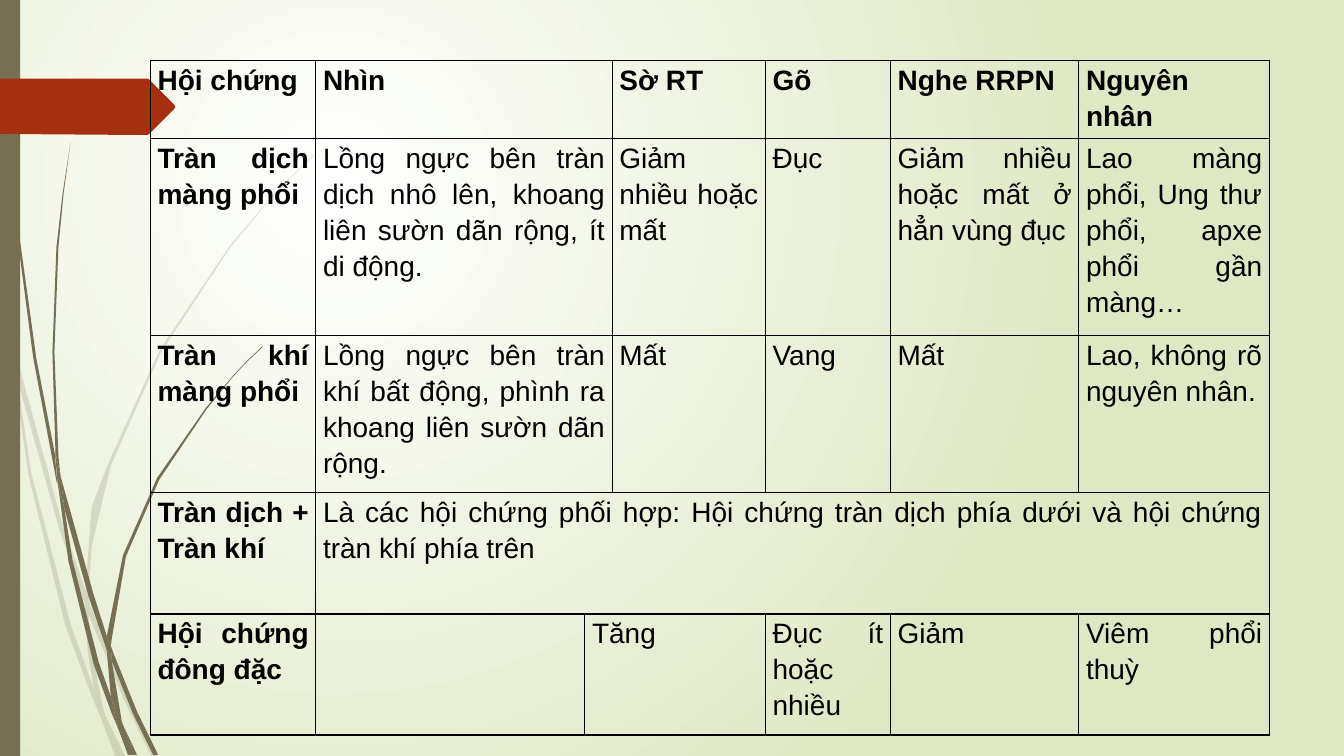
from lxml.etree import SubElement
from pptx import Presentation
from pptx.dml.color import RGBColor as Rgb
from pptx.enum.shapes import MSO_SHAPE as Shape
from pptx.enum.text import PP_ALIGN as Align
from pptx.oxml.ns import qn
from pptx.util import Cm, Pt

COLORS = {"ink": "000000", "stem": "766F54", "tab": "A53010",
          "glow": "FFFFFF", "field": "DFE8C4"}
FONT = "Arial"
UNIT = Cm(2.54) / 100  # outlines are in hundredths of an inch

# Outlines of the grass, as corner points
PALE_GRASS = [
    [(11, 350), (9, 322), (0, 282), (0, 299), (10, 344)],
    [(58, 522), (84, 599), (85, 586), (62, 520), (14, 345), (17, 376)],
    [(92, 607), (88, 596), (88, 610), (123, 694), (150, 750), (155, 750),
     (127, 692)],
    [(119, 750), (124, 750), (105, 711)],
    [(93, 683), (70, 619), (31, 469), (17, 376), (11, 350), (28, 470),
     (65, 621), (92, 693), (101, 714), (99, 707)],
    [(84, 599), (87, 646), (93, 683), (96, 692), (105, 711), (103, 706),
     (91, 646), (88, 610), (88, 608)],
    [(88, 584), (91, 542), (110, 462), (160, 349), (229, 245), (268, 198),
     (290, 175), (312, 154), (312, 153), (289, 175), (268, 197), (228, 244),
     (158, 348), (107, 461), (91, 503), (85, 584), (85, 586), (88, 596)],
    [(101, 714), (114, 750), (119, 750)],
    [(88, 608), (88, 610), (88, 596), (85, 586), (84, 599)],
    [(96, 692), (93, 683), (99, 707), (101, 714), (119, 750), (105, 711)],
]
DARK_GRASS = [
    [(7, 110), (17, 233), (33, 355), (56, 477), (57, 481), (55, 457),
     (55, 453), (36, 355), (19, 232), (8, 109), (5, 48), (4, 0), (3, 0),
     (4, 48)],
    [(88, 592), (106, 645), (106, 633), (106, 631), (93, 590), (60, 472),
     (64, 505)],
    [(113, 649), (110, 641), (111, 656), (132, 708), (152, 749), (157, 749),
     (136, 706)],
    [(110, 691), (98, 657), (72, 556), (64, 505), (57, 477), (68, 557),
     (93, 659), (111, 708), (117, 722), (116, 717)],
    [(60, 472), (58, 453), (54, 349), (58, 245), (63, 193), (70, 141),
     (62, 193), (56, 245), (52, 349), (55, 449)],
    [(133, 749), (136, 749), (122, 719)],
    [(57, 477), (64, 505), (60, 472), (55, 449), (55, 453)],
    [(111, 633), (125, 552), (158, 476), (205, 406), (231, 374), (245, 359),
     (261, 344), (260, 344), (245, 358), (231, 373), (204, 405), (156, 474),
     (122, 551), (106, 631), (110, 641)],
    [(117, 722), (127, 749), (131, 749)],
    [(106, 645), (110, 691), (116, 706), (122, 719), (121, 716), (111, 656),
     (109, 651)],
    [(106, 645), (109, 651), (111, 656), (110, 641), (106, 631), (106, 633)],
    [(116, 706), (110, 691), (116, 717), (117, 722), (130, 749), (133, 749),
     (122, 719)],
]
TAB = [(0, 0), (146, 0), (148, 1), (173, 26), (174, 28), (173, 30),
       (148, 55), (146, 56), (136, 56), (0, 55)]

# Table cells: first column, last column, text
COLUMNS = [4.17, 6.78, 0.69, 3.86, 3.15, 4.75, 4.8]
ROWS = [1.98, 4.96, 3.96, 3.05, 3.05]
CELLS = [
    [(0, 0, "Hội chứng"), (1, 2, "Nhìn"), (3, 3, "Sờ RT"), (4, 4, "Gõ"),
     (5, 5, "Nghe RRPN"), (6, 6, "Nguyên nhân")],
    [(0, 0, "Tràn dịch màng phổi"),
     (1, 2, "Lồng ngực bên tràn dịch nhô lên, khoang liên sườn dãn rộng, "
            "ít di động."),
     (3, 3, "Giảm nhiều hoặc mất"), (4, 4, "Đục"),
     (5, 5, "Giảm nhiều hoặc mất ở hẳn vùng đục"),
     (6, 6, "Lao màng phổi, Ung thư phổi, apxe phổi gần màng…")],
    [(0, 0, "Tràn khí màng phổi"),
     (1, 2, "Lồng ngực bên tràn khí bất động, phình ra khoang liên sườn "
            "dãn rộng."),
     (3, 3, "Mất"), (4, 4, "Vang"), (5, 5, "Mất"),
     (6, 6, "Lao, không rõ nguyên nhân.")],
    [(0, 0, "Tràn dịch + Tràn khí"),
     (1, 6, "Là các hội chứng phối hợp: Hội chứng tràn dịch phía dưới và "
            "hội chứng tràn khí phía trên")],
    [(0, 0, "Hội chứng đông đặc"), (2, 3, "Tăng"),
     (4, 4, "Đục ít hoặc nhiều"), (5, 5, "Giảm"), (6, 6, "Viêm phổi thuỳ")],
]


def color(name):
    return Rgb.from_string(COLORS[name])


def paint(shape, name, opacity=100):
    shape.shadow.inherit = False
    shape.fill.solid()
    shape.fill.fore_color.rgb = color(name)
    shape.line.fill.background()
    if opacity < 100:
        tint = shape.fill._xPr.find(".//" + qn("a:srgbClr"))
        SubElement(tint, qn("a:alpha"), val=str(opacity * 1000))


def draw_outline(page, points, left, top, name, opacity=100):
    builder = page.shapes.build_freeform(*points[0], scale=UNIT)
    builder.add_line_segments(points[1:], close=True)
    shape = builder.convert_to_shape(left, top)
    paint(shape, name, opacity)
    return shape


def draw_background(page):
    fill = page.background.fill
    fill.gradient()
    for stop, name in zip(fill.gradient_stops, ("glow", "field")):
        stop.color.rgb = color(name)
    gradient = page._element.find(".//" + qn("a:gradFill"))
    gradient.remove(gradient.find(qn("a:lin")))
    circle = SubElement(gradient, qn("a:path"), path="circle")
    SubElement(circle, qn("a:fillToRect"),
               l="50000", t="50000", r="100000", b="100000")


def draw_grass(page, left, top, blades, opacity):
    page.shapes.add_group_shape(
        [draw_outline(page, blade, left, top, "stem", opacity)
         for blade in blades])


def draw_side_bar(page, left, top, width, height):
    bar = page.shapes.add_shape(Shape.RECTANGLE, left, top, width, height)
    paint(bar, "stem")


def add_borders(cell):
    properties = cell._tc.get_or_add_tcPr()
    for place, side in enumerate(("lnL", "lnR", "lnT", "lnB")):
        line = SubElement(properties, qn("a:" + side), w=str(Pt(1)))
        fill = SubElement(line, qn("a:solidFill"))
        SubElement(fill, qn("a:srgbClr"), val=COLORS["ink"])
        properties.insert(place, line)


def write_cell(cell, text, bold):
    para = cell.text_frame.paragraphs[0]
    para.alignment = Align.JUSTIFY
    para.line_spacing = 1.15
    span = para.add_run()
    span.text = text
    span.font.name = FONT
    span.font.size = Pt(20)
    span.font.bold = bold
    span.font.color.rgb = color("ink")


def draw_table(page, left, top):
    frame = page.shapes.add_table(len(ROWS), len(COLUMNS), left, top,
                                  Cm(sum(COLUMNS)), Cm(sum(ROWS)))
    table = frame.table
    table.first_row = table.horz_banding = False
    for column, width in zip(table.columns, COLUMNS):
        column.width = Cm(width)
    for row, height in zip(table.rows, ROWS):
        row.height = Cm(height)
    for cell in table.iter_cells():
        cell.fill.background()
        cell.margin_left = cell.margin_right = Cm(0.18)
        cell.margin_top = cell.margin_bottom = 0
        add_borders(cell)
    for row, entries in enumerate(CELLS):
        for first, last, text in entries:
            cell = table.cell(row, first)
            if last > first:
                cell.merge(table.cell(row, last))
            write_cell(cell, text, bold=row == 0 or first == 0)


def main():
    deck = Presentation()
    deck.slide_width, deck.slide_height = Cm(33.87), Cm(19.05)
    page = deck.slides.add_slide(deck.slide_layouts[6])
    draw_background(page)
    draw_grass(page, 0, 0, PALE_GRASS, opacity=20)
    draw_grass(page, 0, 0, DARK_GRASS, opacity=100)
    draw_side_bar(page, 0, 0, Cm(0.51), deck.slide_height)
    draw_outline(page, TAB, 0, Cm(1.98), "tab")
    draw_table(page, Cm(3.79), Cm(1.52))
    deck.save("out.pptx")


if __name__ == "__main__":
    main()
